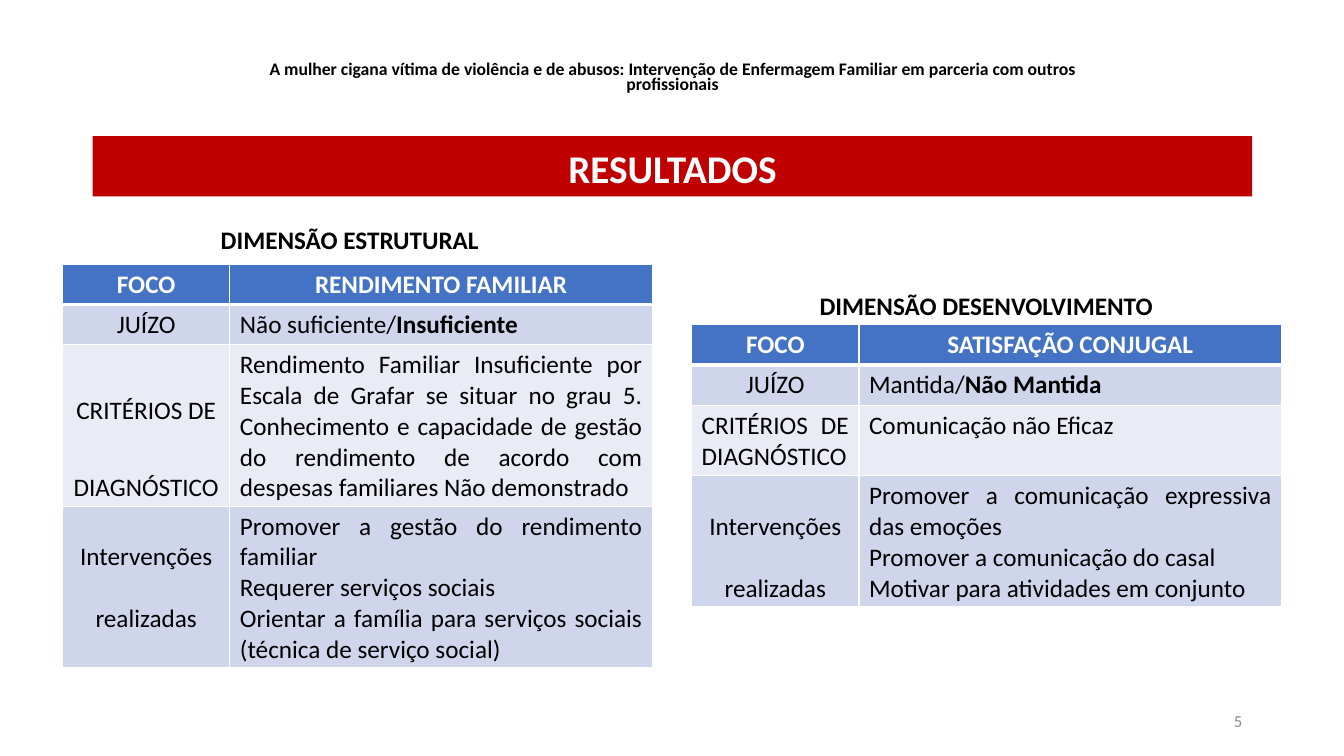
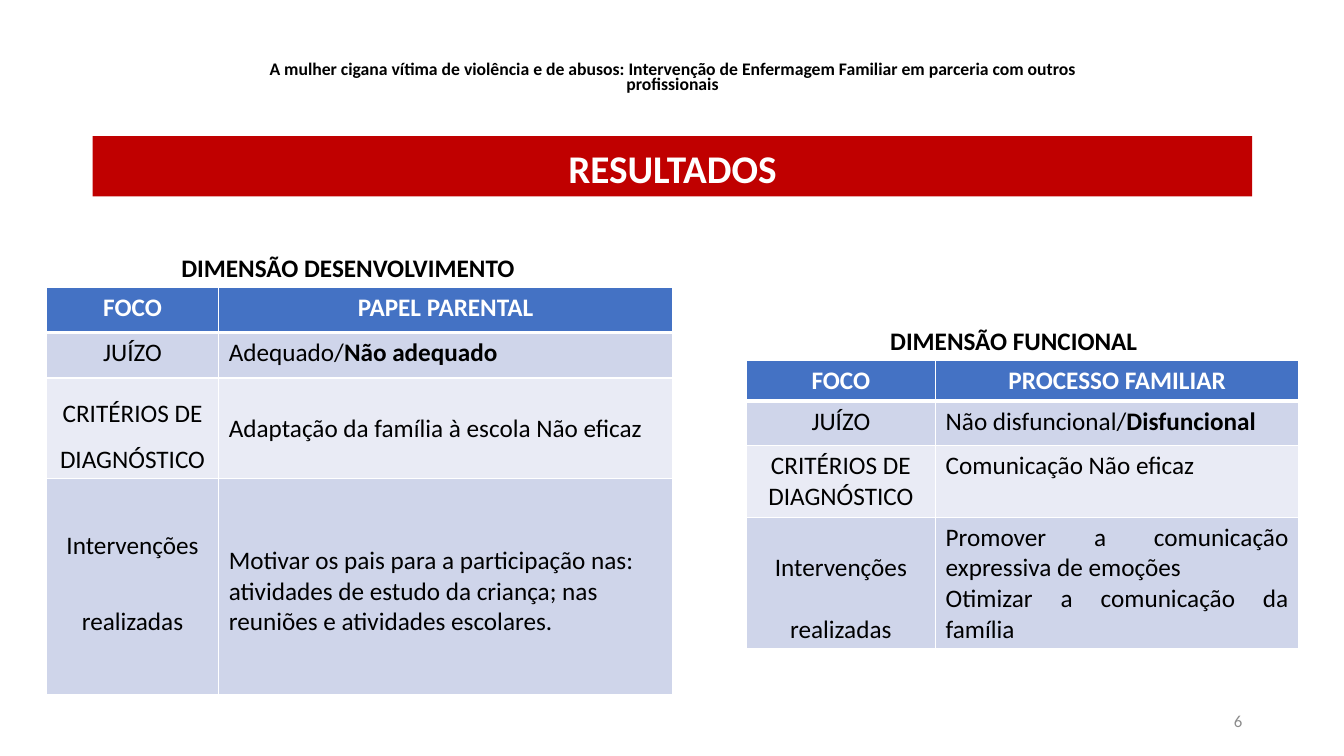
"""Build two result slides, each pairing two family-assessment tables."""
from dataclasses import dataclass

from lxml.etree import SubElement
from pptx import Presentation
from pptx.dml.color import RGBColor
from pptx.enum.shapes import MSO_SHAPE as Shape
from pptx.enum.text import MSO_ANCHOR as Anchor, PP_ALIGN as Align
from pptx.oxml.ns import qn

PX = 9144
FONT = "Calibri"
COLORS = {
    "band": "C00000",
    "header": "4472C4",
    "odd_row": "CFD5EA",
    "even_row": "E9EBF5",
    "light": "FFFFFF",
    "text": "000000",
    "page_number": "8C8C8C",
}
ROW_FILLS = ("header", "odd_row", "even_row", "odd_row")
ROW_LABELS = ("FOCO", "JUÍZO", "CRITÉRIOS DE DIAGNÓSTICO", "Intervenções realizadas")
STUDY_TITLE = (
    "A mulher cigana vítima de violência e de abusos: Intervenção de "
    "Enfermagem Familiar em parceria com outros profissionais"
)


@dataclass
class Dimension:
    """One headed table: its place, its wording and its paragraph settings."""
    heading: str
    heading_box: tuple
    corner: tuple
    columns: tuple
    rows: tuple
    focus: str
    judgement: tuple
    criteria: str
    interventions: tuple
    criteria_spacing: float = 1
    interventions_spacing: float = 2
    criteria_align: Align = Align.CENTER
    body_align: Align = Align.JUSTIFY
    finding_spacing: float = 1
    interventions_inset: int = 5


SLIDES = {
    5: (
        Dimension(
            "DIMENSÃO ESTRUTURAL", (209, 218, 291, 40),
            (62, 262), (166, 419), (40, 40, 160, 160),
            "RENDIMENTO FAMILIAR", ("Não suficiente/", "Insuficiente"),
            "Rendimento Familiar Insuficiente por Escala de Grafar se situar no "
            "grau 5. Conhecimento e capacidade de gestão do rendimento de acordo "
            "com despesas familiares Não demonstrado",
            ("Promover a gestão do rendimento familiar",
             "Requerer serviços sociais",
             "Orientar a família para serviços sociais (técnica de serviço social)"),
            criteria_spacing=2.5,
        ),
        Dimension(
            "DIMENSÃO DESENVOLVIMENTO", (803, 283, 351, 40),
            (686, 322), (166, 419), (40, 40, 70, 130),
            "SATISFAÇÃO CONJUGAL", ("Mantida/", "Não Mantida"),
            "Comunicação não Eficaz",
            ("Promover a comunicação expressiva das emoções",
             "Promover a comunicação do casal",
             "Motivar para atividades em conjunto"),
            criteria_align=Align.JUSTIFY,
        ),
    ),
    6: (
        Dimension(
            "DIMENSÃO DESENVOLVIMENTO", (170, 245, 372, 40),
            (46, 285), (171, 450), (45, 45, 100, 214),
            "PAPEL PARENTAL", ("Adequado/", "Não adequado"),
            "Adaptação da família à escola Não eficaz",
            ("Motivar os pais para a participação nas: atividades de estudo da "
             "criança; nas reuniões e atividades escolares.",),
            criteria_spacing=1.5, interventions_spacing=2.5,
            body_align=Align.LEFT, finding_spacing=2, interventions_inset=66,
        ),
        Dimension(
            "DIMENSÃO FUNCIONAL", (873, 318, 281, 40),
            (740, 358), (188, 360), (39, 44, 71, 130),
            "PROCESSO FAMILIAR", ("Não disfuncional/", "Disfuncional"),
            "Comunicação Não eficaz",
            ("Promover a comunicação expressiva de emoções",
             "Otimizar a comunicação da família"),
        ),
    ),
}


def px(*lengths):
    """Turn px lengths into EMU."""
    return [length * PX for length in lengths]


def rgb(role):
    """Look up a colour by its role."""
    return RGBColor.from_string(COLORS[role])


def style(paragraph, size, color="text", bold=False, align=Align.LEFT, spacing=1):
    """Set the font and layout of a paragraph."""
    font = paragraph.font
    font.name, font.size, font.bold = FONT, int(size * 12700), bold
    font.color.rgb = rgb(color)
    paragraph.alignment = align
    paragraph.line_spacing = spacing


def add_label(slide, box, text, size, wrap=True, **look):
    """Add a vertically centred line of text."""
    frame = slide.shapes.add_textbox(*px(*box)).text_frame
    frame.word_wrap = wrap
    frame.margin_top = frame.margin_bottom = 0
    frame.vertical_anchor = Anchor.MIDDLE
    frame.text = text
    style(frame.paragraphs[0], size, **look)


def add_band(slide, text):
    """Add the section band below the study title."""
    band = slide.shapes.add_shape(Shape.RECTANGLE, *px(92, 135, 1150, 60))
    band.shadow.inherit = False
    band.fill.solid()
    band.fill.fore_color.rgb = rgb("band")
    band.line.fill.background()
    frame = band.text_frame
    frame.vertical_anchor = Anchor.BOTTOM
    frame.text = text
    style(frame.paragraphs[0], 28, "light", True, Align.CENTER)


def add_borders(cell, row):
    """Draw white cell borders, thicker under the header row."""
    properties = cell._tc.get_or_add_tcPr()
    widths = {"lnL": 1, "lnR": 1, "lnT": 3 if row == 1 else 1, "lnB": 3 if row == 0 else 1}
    for side, points in widths.items():
        line = SubElement(properties, qn(f"a:{side}"), w=str(points * 12700))
        fill = SubElement(line, qn("a:solidFill"))
        SubElement(fill, qn("a:srgbClr"), val=COLORS["light"])


def fill_cell(cell, row, texts, align, spacing=1):
    """Write one paragraph per text and colour the cell for its row."""
    add_borders(cell, row)
    cell.fill.solid()
    cell.fill.fore_color.rgb = rgb(ROW_FILLS[row])
    cell.text = "\n".join(texts)
    header = row == 0
    for paragraph in cell.text_frame.paragraphs:
        style(paragraph, 18, "light" if header else "text", header, align, spacing)


def add_dimension(slide, dimension):
    """Add a dimension's heading and its table."""
    add_label(slide, dimension.heading_box, dimension.heading, 18, wrap=False, bold=True)
    size = sum(dimension.columns), sum(dimension.rows)
    table = slide.shapes.add_table(4, 2, *px(*dimension.corner, *size)).table
    for column, width in zip(table.columns, px(*dimension.columns)):
        column.width = width
    for row, height in zip(table.rows, px(*dimension.rows)):
        row.height = height

    label_aligns = (Align.CENTER, Align.CENTER, dimension.criteria_align, Align.CENTER)
    label_spacings = (1, 1, dimension.criteria_spacing, dimension.interventions_spacing)
    for row, label in enumerate(ROW_LABELS):
        fill_cell(table.cell(row, 0), row, [label], label_aligns[row], label_spacings[row])

    options, verdict = dimension.judgement
    body = dimension.body_align
    findings = (
        ([dimension.focus], Align.CENTER, 1),
        ([options], body, 1),
        ([dimension.criteria], body, dimension.finding_spacing),
        (dimension.interventions, body, 1),
    )
    for row, finding in enumerate(findings):
        fill_cell(table.cell(row, 1), row, *finding)
    emphasis = table.cell(1, 1).text_frame.paragraphs[0].add_run()
    emphasis.text = verdict
    emphasis.font.bold = True
    table.cell(3, 1).margin_top = dimension.interventions_inset * PX


def add_results_slide(deck, number, dimensions):
    """Add a results slide with its shared frame and its tables."""
    slide = deck.slides.add_slide(deck.slide_layouts[6])
    add_label(slide, (217, 60, 900, 35), STUDY_TITLE, 12.6,
              bold=True, align=Align.CENTER, spacing=0.7)
    add_band(slide, "RESULTADOS")
    add_label(slide, (942, 695, 300, 40), str(number), 12,
              color="page_number", align=Align.RIGHT)
    for dimension in dimensions:
        add_dimension(slide, dimension)


def main():
    """Build and save the deck."""
    deck = Presentation()
    deck.slide_width, deck.slide_height = px(1333, 750)
    for number, dimensions in SLIDES.items():
        add_results_slide(deck, number, dimensions)
    deck.save("out.pptx")


if __name__ == "__main__":
    main()
